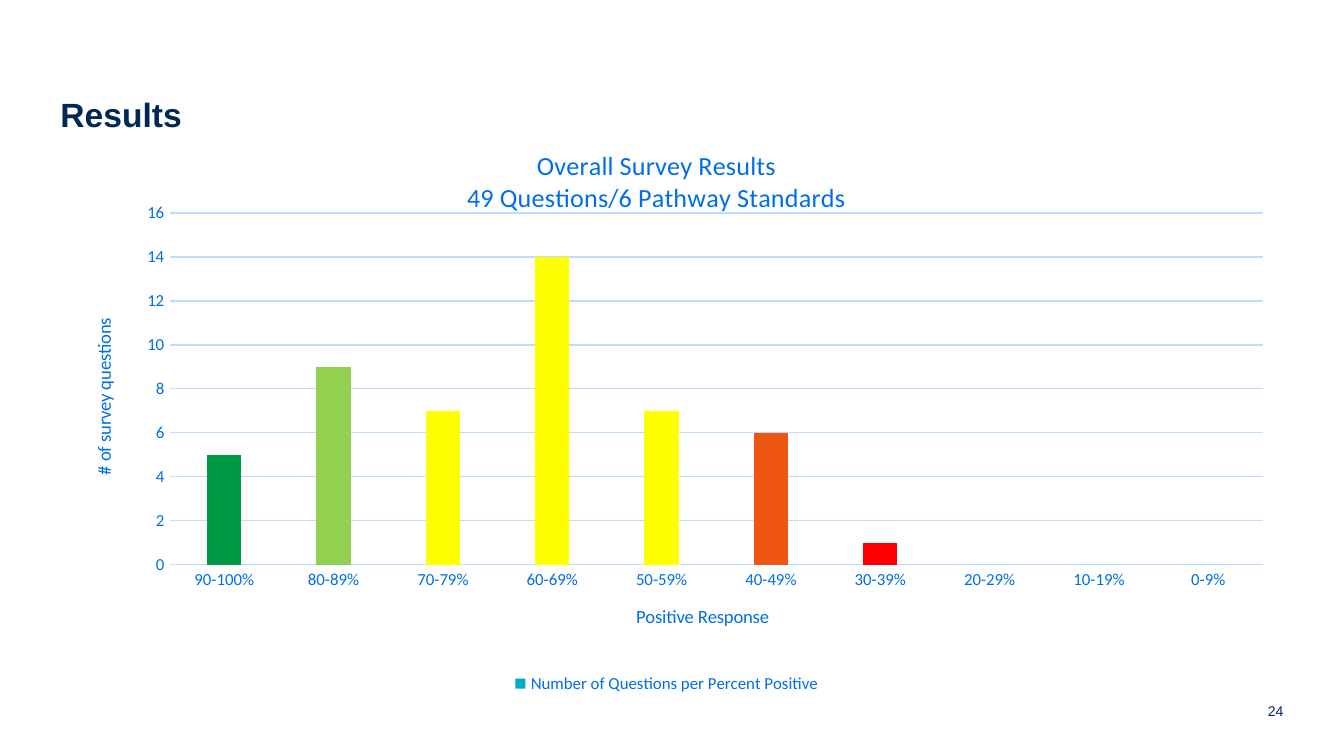
from pptx import Presentation
from pptx import util as u
from pptx.chart.data import CategoryChartData
from pptx.dml.color import RGBColor
from pptx.enum import chart as ch, text
from pptx.oxml import parse_xml
from pptx.oxml.ns import nsdecls, qn

NAVY, BLUE, PALE_BLUE, TEAL = "002855", "006EEA", "BFDDFF", "00ABC8"
YELLOW = "FFFF00"
RESULTS = [
    ("90-100%", 5, "009A44"), ("80-89%", 9, "92D050"), ("70-79%", 7, YELLOW),
    ("60-69%", 14, YELLOW), ("50-59%", 7, YELLOW), ("40-49%", 6, "EE5612"),
    ("30-39%", 1, "FF0000"), ("20-29%", 0, None), ("10-19%", 0, None), ("0-9%", 0, None),
]


def color(hex_value):
    return RGBColor.from_string(hex_value)


def set_font(font, size, hex_value, name="Calibri", bold=False):
    font.size, font.name, font.bold = u.Pt(size), name, bold
    font.color.rgb = color(hex_value)


def place(shape, left, top, width, height):
    shape.left, shape.top = u.Inches(left), u.Inches(top)
    shape.width, shape.height = u.Inches(width), u.Inches(height)


def write(frame, content, align=None, **font_format):
    """Write one paragraph for each line of content."""
    for index, line in enumerate(content.split("\n")):
        paragraph = frame.paragraphs[0] if index == 0 else frame.add_paragraph()
        paragraph.alignment = align
        run = paragraph.add_run()
        run.text = line
        set_font(run.font, **font_format)


def clear_margins(frame, anchor):
    frame.margin_left = frame.margin_right = frame.margin_top = frame.margin_bottom = 0
    frame.vertical_anchor = anchor


def set_layout(parent, position, **fractions):
    """Fix a chart part at fractions of the chart area."""
    for old in parent.findall(qn("c:layout")):
        parent.remove(old)
    target = '<c:layoutTarget val="inner"/>' if "w" in fractions else ""
    sizes = "".join(f'<c:{key} val="{value}"/>' for key, value in fractions.items())
    parent.insert(position, parse_xml(
        f'<c:layout {nsdecls("c")}><c:manualLayout>{target}<c:xMode val="edge"/>'
        f'<c:yMode val="edge"/>{sizes}</c:manualLayout></c:layout>'))


def add_chart_title(title, content, size, x, y):
    write(title.text_frame, content, size=size, hex_value=BLUE)
    set_layout(title.element, 1, x=x, y=y)


def style_axis(axis):
    axis.major_tick_mark = axis.minor_tick_mark = ch.XL_TICK_MARK.NONE
    set_font(axis.tick_labels.font, 9, BLUE)


def style_line(line):
    line.color.rgb, line.width = color(PALE_BLUE), u.Pt(0.75)


def add_title(slide):
    title = slide.shapes.title
    place(title, 0.45, 0.7, 9.1, 0.7)
    clear_margins(title.text_frame, text.MSO_ANCHOR.TOP)
    write(title.text_frame, "Results", text.PP_ALIGN.LEFT,
          size=18, hex_value=NAVY, name="Arial", bold=True)


def add_page_number(slide):
    box = slide.shapes.add_textbox(*map(u.Inches, (9.25, 5.2, 0.3, 0.15)))
    clear_margins(box.text_frame, text.MSO_ANCHOR.BOTTOM)
    write(box.text_frame, "24", text.PP_ALIGN.RIGHT,
          size=7.5, hex_value=NAVY, name="Arial")


def add_survey_chart(slide):
    data = CategoryChartData()
    data.categories = [label for label, _, _ in RESULTS]
    data.add_series("Number of Questions per Percent Positive",
                    [count for _, count, _ in RESULTS])
    chart = slide.shapes.add_chart(
        ch.XL_CHART_TYPE.COLUMN_CLUSTERED,
        *map(u.Inches, (0.45, 1.06, 9.02, 4.14)), data).chart
    set_font(chart.font, 10, NAVY)
    add_chart_title(chart.chart_title,
                    "Overall Survey Results\n49 Questions/6 Pathway Standards",
                    14, x=0.332, y=0.002)

    plot = chart.plots[0]
    plot.gap_width, plot.overlap, plot.vary_by_categories = 219, -27, False
    set_layout(chart.element.find(".//" + qn("c:plotArea")), 0,
               x=0.09, y=0.127, w=0.902, h=0.632)
    series = plot.series[0]
    series.format.fill.solid()
    series.format.fill.fore_color.rgb = color(TEAL)
    for index, (_, _, bar_color) in enumerate(RESULTS):
        if bar_color:
            fill = series.points[index].format.fill
            fill.solid()
            fill.fore_color.rgb = color(bar_color)

    categories, values = chart.category_axis, chart.value_axis
    style_axis(categories)
    style_line(categories.format.line)
    add_chart_title(categories.axis_title, "Positive Response", 10, x=0.472, y=0.824)
    style_axis(values)
    values.minimum_scale, values.maximum_scale, values.major_unit = 0, 16, 2
    values.format.line.fill.background()
    style_line(values.major_gridlines.format.line)
    add_chart_title(values.axis_title, "# of survey questions", 10, x=0.023, y=0.31)

    chart.has_legend = True
    chart.legend.position = ch.XL_LEGEND_POSITION.BOTTOM
    chart.legend.include_in_layout = False
    set_font(chart.legend.font, 9, BLUE)


def main():
    presentation = Presentation()
    presentation.slide_width = u.Inches(10)
    presentation.slide_height = u.Inches(10 * 9 / 16)
    slide = presentation.slides.add_slide(presentation.slide_layouts[5])
    add_title(slide)
    add_page_number(slide)
    add_survey_chart(slide)
    presentation.save("out.pptx")


if __name__ == "__main__":
    main()
